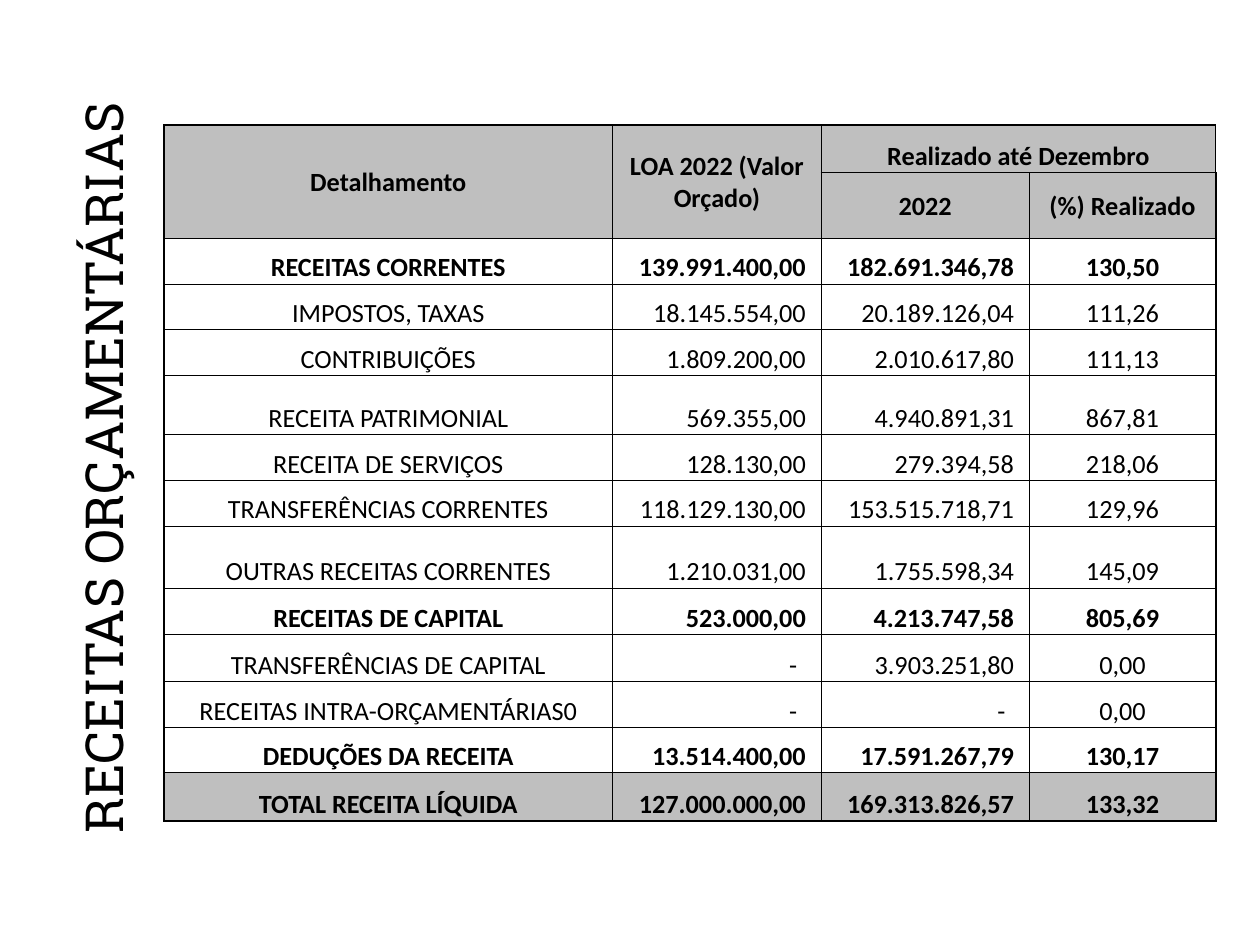
from lxml import etree
from pptx import Presentation
from pptx import util as u
from pptx.dml.color import RGBColor
from pptx.enum import text
from pptx.oxml.ns import qn

WIDTH, HEIGHT = u.Inches(10), u.Inches(7.5)
COLORS = {"ink": "000000", "band": "BFBFBF"}
COLUMN_WEIGHTS = [356, 165, 165, 148]
ROW_WEIGHTS = [38, 51, 36, 36, 36, 47, 36, 36, 49, 37, 37, 36, 36, 38]
HEADERS = [
    ["Detalhamento", "LOA 2022 (Valor Orçado)", "Realizado até Dezembro", ""],
    ["", "", "2022", "(%) Realizado"],
]
REVENUES = [
    ["RECEITAS CORRENTES", "139.991.400,00", "182.691.346,78", "130,50"],
    ["IMPOSTOS, TAXAS", "18.145.554,00", "20.189.126,04", "111,26"],
    ["CONTRIBUIÇÕES", "1.809.200,00", "2.010.617,80", "111,13"],
    ["RECEITA PATRIMONIAL", "569.355,00", "4.940.891,31", "867,81"],
    ["RECEITA DE SERVIÇOS", "128.130,00", "279.394,58", "218,06"],
    ["TRANSFERÊNCIAS CORRENTES", "118.129.130,00", "153.515.718,71", "129,96"],
    ["OUTRAS RECEITAS CORRENTES", "1.210.031,00", "1.755.598,34", "145,09"],
    ["RECEITAS DE CAPITAL", "523.000,00", "4.213.747,58", "805,69"],
    ["TRANSFERÊNCIAS DE CAPITAL", "-", "3.903.251,80", "0,00"],
    ["RECEITAS INTRA-ORÇAMENTÁRIAS0", "-", "-", "0,00"],
    ["DEDUÇÕES DA RECEITA", "13.514.400,00", "17.591.267,79", "130,17"],
    ["TOTAL RECEITA LÍQUIDA", "127.000.000,00", "169.313.826,57", "133,32"],
]
BOLD_ROWS = {0, 1, 2, 9, 12, 13}
BAND_ROWS = {0, 1, 13}


def percent_box(left, top, width, height):
    """Turn percentages of the slide's size into lengths."""
    return [u.Emu(round(share * side / 100)) for share, side in
            zip((left, top, width, height), (WIDTH, HEIGHT, WIDTH, HEIGHT))]


def style_font(font, name, size, bold=False):
    """Set the typeface, size, weight and ink colour."""
    font.name, font.size, font.bold = name, u.Pt(size), bold
    font.color.rgb = RGBColor.from_string(COLORS["ink"])


def add_borders(cell, row, column):
    """Draw thin inner lines and thicker lines round the table."""
    outer_sides = {
        "a:lnL": column == 0,
        "a:lnR": column == len(COLUMN_WEIGHTS) - 1,
        "a:lnT": row == 0,
        "a:lnB": row == len(ROW_WEIGHTS) - 1,
    }
    properties = cell._tc.get_or_add_tcPr()
    for side, outer in outer_sides.items():
        line = etree.SubElement(properties, qn(side), w=str(u.Pt(1 if outer else 0.5)))
        fill = etree.SubElement(line, qn("a:solidFill"))
        etree.SubElement(fill, qn("a:srgbClr"), val=COLORS["ink"])


def fill_cell(cell, row, column, value):
    """Write and format one cell of the revenue table."""
    header = row < len(HEADERS)
    amount = not header and column in (1, 2)
    add_borders(cell, row, column)
    if row in BAND_ROWS:
        cell.fill.solid()
        cell.fill.fore_color.rgb = RGBColor.from_string(COLORS["band"])
    else:
        cell.fill.background()
    cell.margin_left = cell.margin_top = cell.margin_right = u.Inches(0.01)
    cell.margin_bottom = 0
    if amount:
        cell.margin_right = u.Inches(0.19 if value == "-" else 0.12)
    middle = header and (row, column) != (0, 2)
    cell.vertical_anchor = text.MSO_ANCHOR.MIDDLE if middle else text.MSO_ANCHOR.BOTTOM
    para = cell.text_frame.paragraphs[0]
    para.text = value
    para.alignment = text.PP_ALIGN.RIGHT if amount else text.PP_ALIGN.CENTER
    style_font(para.font, "Calibri", 15, row in BOLD_ROWS)


def place_title(page, box):
    """Place the title so that, turned to read upwards, it fills the box."""
    left, top, width, height = box
    title = page.shapes.title
    title.left = left + (width - height) // 2
    title.top = top + (height - width) // 2
    title.width, title.height = height, width
    title.rotation = 270
    frame = title.text_frame
    frame.text = "RECEITAS ORÇAMENTÁRIAS"
    frame.word_wrap = False
    frame.auto_size = text.MSO_AUTO_SIZE.NONE
    frame.vertical_anchor = text.MSO_ANCHOR.TOP
    para = frame.paragraphs[0]
    para.alignment = text.PP_ALIGN.CENTER
    style_font(para.font, "Roboto Slab", 30)


def place_table(page, box):
    """Place the revenue table, its grid divided by weight, in the box."""
    rows = HEADERS + REVENUES
    table = page.shapes.add_table(len(rows), len(COLUMN_WEIGHTS), *box).table
    table.first_row = table.horz_banding = False
    for column, weight in zip(table.columns, COLUMN_WEIGHTS):
        column.width = round(box[2] * weight / sum(COLUMN_WEIGHTS))
    for row, weight in zip(table.rows, ROW_WEIGHTS):
        row.height = round(box[3] * weight / sum(ROW_WEIGHTS))
    for row, values in enumerate(rows):
        for column, value in enumerate(values):
            fill_cell(table.cell(row, column), row, column, value)
    for first, last in [((0, 0), (1, 0)), ((0, 1), (1, 1)), ((0, 2), (0, 3))]:
        table.cell(*first).merge(table.cell(*last))


def main():
    """Build and save the budget revenue slide."""
    deck = Presentation()
    deck.slide_width, deck.slide_height = WIDTH, HEIGHT
    page = deck.slides.add_slide(deck.slide_layouts[5])
    place_title(page, percent_box(5.1, 7, 10.1, 85))
    place_table(page, percent_box(13, 13.2, 83.5, 73.6))
    deck.save("out.pptx")


if __name__ == "__main__":
    main()
